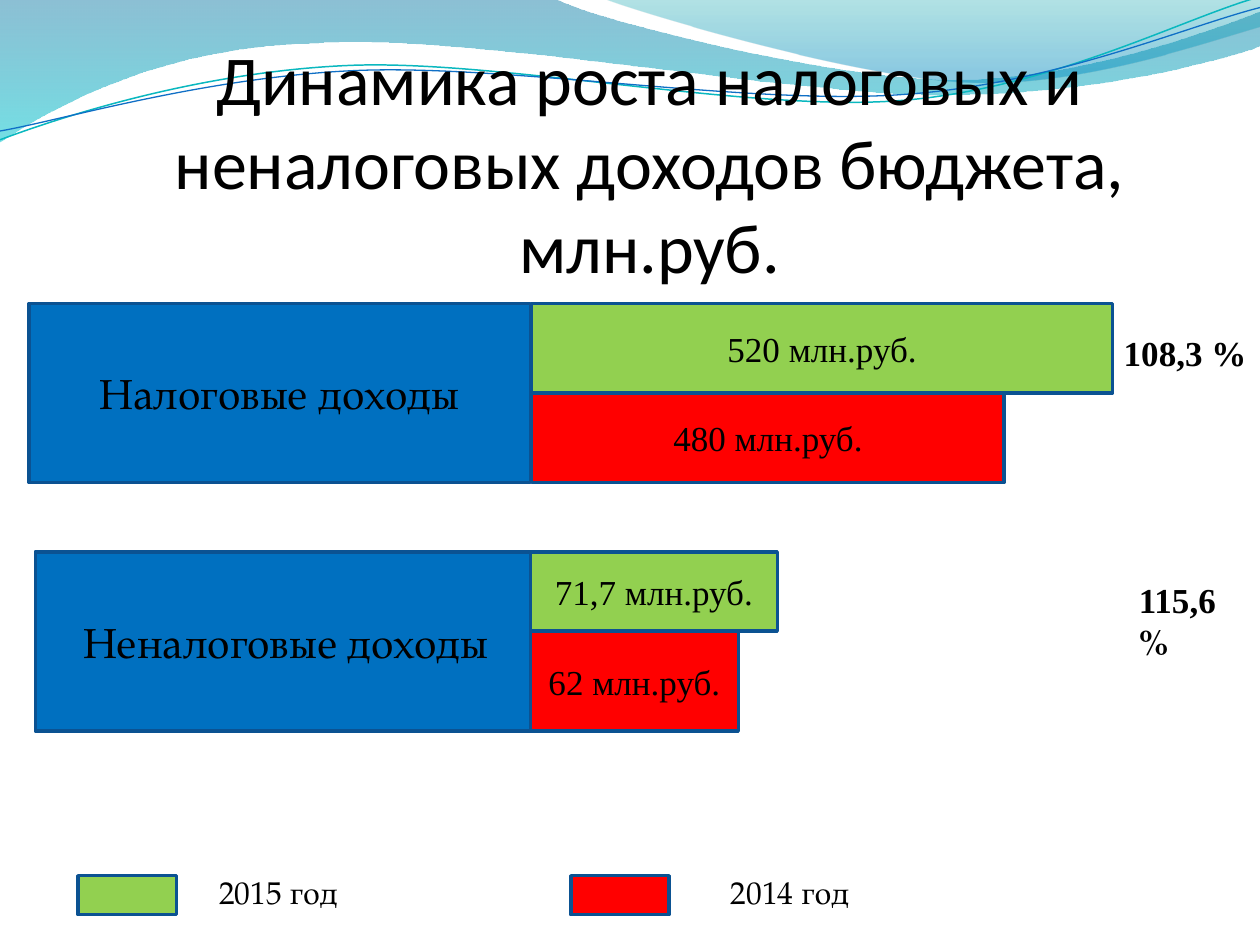
from lxml import etree
from pptx import Presentation
from pptx.dml.color import RGBColor
from pptx.enum.shapes import MSO_SHAPE
from pptx.enum.text import MSO_ANCHOR, MSO_AUTO_SIZE, PP_ALIGN
from pptx.oxml.ns import qn
from pptx.util import Inches, Pt

RECTANGLE = MSO_SHAPE.RECTANGLE
CENTER, LEFT = PP_ALIGN.CENTER, PP_ALIGN.LEFT
TOP, MIDDLE = MSO_ANCHOR.TOP, MSO_ANCHOR.MIDDLE
NO_AUTOFIT = MSO_AUTO_SIZE.NONE

THEME = {
    "category": "0070C0", "2015": "92D050", "2014": "FF0000",
    "outline": "0B5292", "outline_width": 2, "text": "000000",
    "title": ("Calibri", 40), "category_text": ("TeX Gyre Pagella", 24),
    "value_text": ("Times New Roman", 20), "legend_text": ("TeX Gyre Pagella", 18),
}

TITLE = "Динамика роста налоговых и неналоговых доходов бюджета, млн.руб."
CATEGORY_WIDTH, GROUP_HEIGHT = 3.98, 1.42
GROUPS = [
    {"name": "Налоговые доходы", "left": 0.23, "top": 2.41, "bar_left": 4.22,
     "bars": [("2015", "520 млн.руб.", 4.61, 0.71), ("2014", "480 млн.руб.", 3.75, 0.71)]},
    {"name": "Неналоговые доходы", "left": 0.28, "top": 4.38, "bar_left": 4.21,
     "bars": [("2015", "71,7 млн.руб.", 1.96, 0.63), ("2014", "62 млн.руб.", 1.65, 0.79)]},
]
GROWTH = [
    (["108,3 %"], (8.82, 2.58, 1.18, 0.44), False),
    (["115,6", " %"], (8.94, 4.54, 1.11, 0.44), True),
]
LEGEND = [("2015", "2015 год", 0.62, 1.64, 1.8), ("2014", "2014 год", 4.53, 5.7, 1.64)]

WAVE_FILLS = [
    ([[(0, 0)], [(4.4, -0.01)],
      [(4.76, 0.17), (6.64, 0.63), (7.58, 0.63)], [(8.53, 0.63), (9.58, 0.26), (10, 0.09)],
      [(10.01, 0.36)], [(9.83, 0.44), (8.7, 0.76), (7.46, 0.75)],
      [(6.22, 0.75), (3.82, 0.28), (2.57, 0.34)], [(1.29, 0.36), (0.46, 0.83), (-0.01, 1.13)],
      [(0, 0)]],
     [(0, "0074A1", 45), (1, "00C6CF", 55)]),
    ([[(4.79, -0.01)], [(5.09, 0.11), (6.82, 0.62), (7.69, 0.65)],
      [(8.56, 0.69), (9.61, 0.32), (10, 0.21)], [(10, 0)], [(4.79, -0.01)]],
     [(0, "00A1A9", 30), (0.8, "008BBF", 45)]),
]
WAVE_LINES = [
    ([[(0, 1.11)], [(0.48, 0.93), (1.58, 0.57), (2.77, 0.52)],
      [(3.95, 0.47), (5.93, 0.89), (7.13, 0.8)], [(8.33, 0.71), (9.38, 0.15), (9.98, -0.02)]],
     "0AB8BF", 0.85),
    ([[(0, 1.04)], [(0.47, 0.96), (1.64, 0.61), (2.83, 0.56)],
      [(4.03, 0.51), (5.97, 0.84), (7.17, 0.75)], [(8.36, 0.67), (9.41, 0.21), (10, 0.06)]],
     "0F6FC6", 0.75),
]


def color(value):
    return RGBColor.from_string(value)


def add_wave(slide, segments, closed):
    start, *rest = [(Inches(x), Inches(y)) for segment in segments for x, y in segment]
    builder = slide.shapes.build_freeform(*start)
    builder.add_line_segments(rest, close=closed)
    wave = builder.convert_to_shape()
    wave.shadow.inherit = False
    steps = iter(list(wave._element.spPr.iter(qn("a:lnTo"))))
    for segment in segments[1:]:
        first, *others = [next(steps) for _ in segment]
        if others:
            first.tag = qn("a:cubicBezTo")
        for other in others:
            first.append(other[0])
            other.getparent().remove(other)
    return wave


def add_waves(slide):
    for segments, stops in WAVE_FILLS:
        wave = add_wave(slide, segments, True)
        wave.line.fill.background()
        wave.fill.gradient()
        wave.fill.gradient_angle = 270
        for stop, (position, tint, _) in zip(wave.fill.gradient_stops, stops):
            stop.position = position
            stop.color.rgb = color(tint)
        tints = wave._element.spPr.iter(qn("a:srgbClr"))
        for tint, (_, _, opacity) in zip(tints, stops):
            etree.SubElement(tint, qn("a:alpha")).set("val", str(opacity * 1000))
    for segments, tint, width in WAVE_LINES:
        wave = add_wave(slide, segments, False)
        wave.fill.background()
        wave.line.color.rgb = color(tint)
        wave.line.width = Pt(width)


def style(font, face):
    font.name, font.size = face[0], Pt(face[1])
    font.color.rgb = color(THEME["text"])


def write(holder, text, face, align=LEFT, anchor=TOP, wrap=True):
    frame = holder.text_frame
    frame.word_wrap = wrap
    frame.auto_size = NO_AUTOFIT
    frame.vertical_anchor = anchor
    paragraph = frame.paragraphs[0]
    paragraph.alignment = align
    paragraph.add_run().text = text
    style(paragraph.font, THEME[face])
    return paragraph


def add_box(slide, box, fill, text=None, face=None):
    block = slide.shapes.add_shape(RECTANGLE, *map(Inches, box))
    block.shadow.inherit = False
    block.fill.solid()
    block.fill.fore_color.rgb = color(THEME[fill])
    block.line.color.rgb = color(THEME["outline"])
    block.line.width = Pt(THEME["outline_width"])
    if text:
        write(block, text, face, CENTER, MIDDLE)


def add_label(slide, box, text, face, wrap=True):
    label = slide.shapes.add_textbox(*map(Inches, box))
    return write(label, text, face, wrap=wrap)


def main():
    deck = Presentation()
    deck.slide_width, deck.slide_height = Inches(10), Inches(7.5)
    slide = deck.slides.add_slide(deck.slide_layouts[5])
    add_waves(slide)

    for group in GROUPS:
        top = group["top"]
        add_box(slide, (group["left"], top, CATEGORY_WIDTH, GROUP_HEIGHT),
                "category", group["name"], "category_text")
        for year, value, width, height in group["bars"]:
            add_box(slide, (group["bar_left"], top, width, height), year, value, "value_text")
            top += height

    for year, caption, key_left, caption_left, caption_width in LEGEND:
        add_box(slide, (key_left, 6.95, 0.78, 0.31), year)
        add_label(slide, (caption_left, 6.88, caption_width, 0.4), caption, "legend_text")

    for (figure, *unit), box, wrap in GROWTH:
        paragraph = add_label(slide, box, figure, "value_text", wrap)
        paragraph.font.bold = True
        for part in unit:
            run = paragraph.add_run()
            run.text = part
            run.font.name = THEME["category_text"][0]

    title = slide.shapes.title
    title.left, title.top, title.width, title.height = map(Inches, (0.62, 0.23, 9.07, 2.12))
    write(title, TITLE, "title", CENTER)
    slide.shapes._spTree.append(title._element)
    deck.save("out.pptx")


if __name__ == "__main__":
    main()
